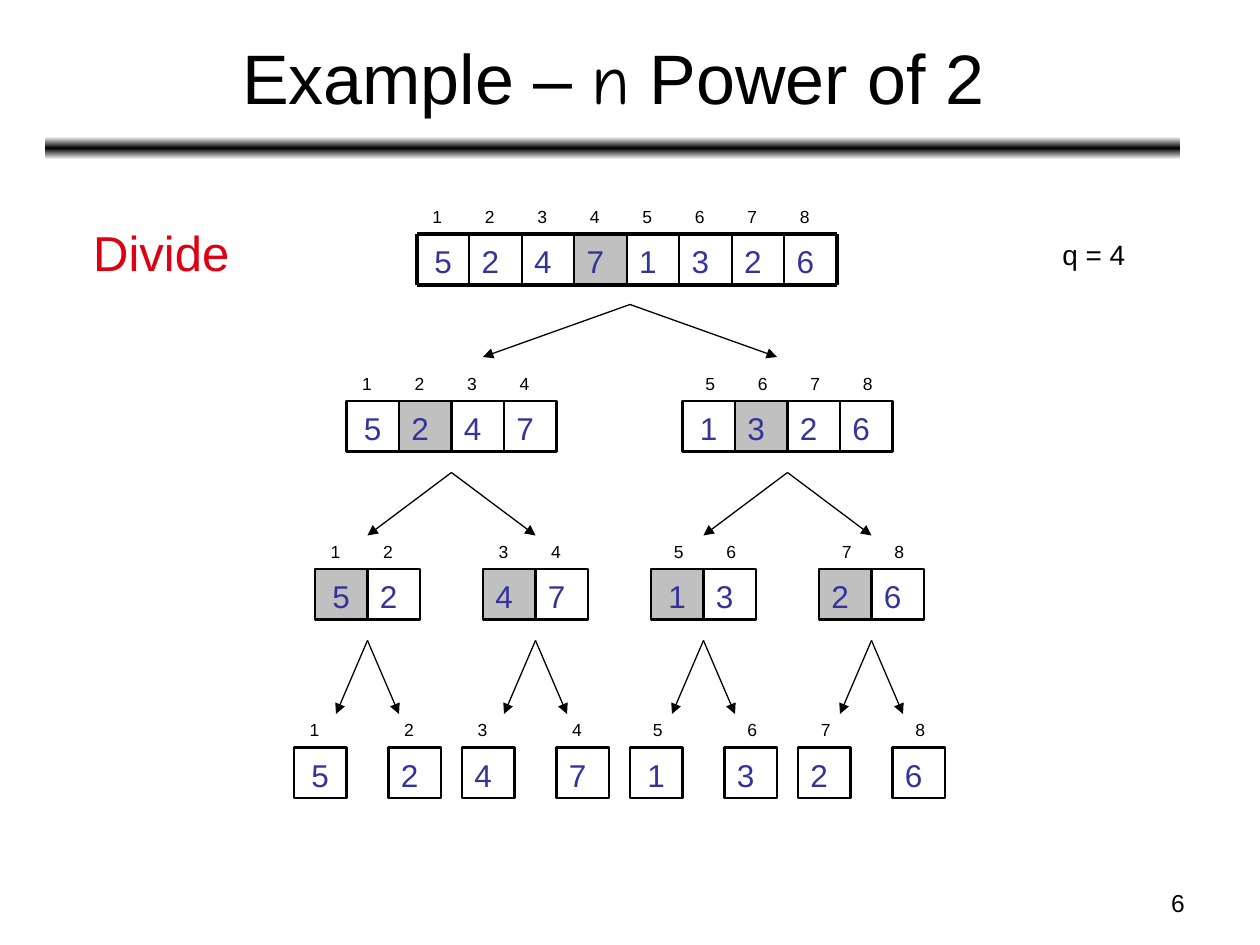
from copy import deepcopy

from lxml import etree
from pptx import Presentation, util as u
from pptx.dml.color import RGBColor
from pptx.enum import shapes, text
from pptx.oxml import ns

BLACK = RGBColor(0, 0, 0)
WHITE = RGBColor(0xFF, 0xFF, 0xFF)
GREY = RGBColor(0xC0, 0xC0, 0xC0)
BLUE = RGBColor(0x33, 0x33, 0x99)
RED = RGBColor(0xDD, 0x01, 0x11)

deck = Presentation()
deck.slide_width, deck.slide_height = u.Inches(10), u.Inches(7.5)
page = deck.slides.add_slide(deck.slide_layouts[6])

# Grid of 120 columns by 90 rows
COLUMN, ROW = deck.slide_width / 120, deck.slide_height / 90
CELL_WIDTH, CELL_HEIGHT = 5, 4.8


def area(left, top, width, height):
    return int(left * COLUMN), int(top * ROW), int(width * COLUMN), int(height * ROW)


def write(runs, left, top, width, height, size=10, color=BLACK, align="LEFT",
          anchor="TOP", wrap=True, fill=None, line=None, top_inset=0.05):
    """Put text on the grid; runs is a string or a list of (words, font)."""
    box = page.shapes.add_textbox(*area(left, top, width, height))
    if fill is not None:
        box.fill.solid()
        box.fill.fore_color.rgb = fill
    if line is not None:
        box.line.color.rgb = BLACK
        box.line.width = u.Pt(line)
    frame = box.text_frame
    frame.word_wrap = wrap
    frame.margin_top = u.Inches(top_inset)
    frame.vertical_anchor = getattr(text.MSO_ANCHOR, anchor)
    para = frame.paragraphs[0]
    para.alignment = getattr(text.PP_ALIGN, align)
    for words, font in [(runs, "Arial")] if isinstance(runs, str) else runs:
        span = para.add_run()
        span.text = words
        span.font.name, span.font.size = font, u.Pt(size)
        span.font.color.rgb = color


def draw_line(x1, y1, x2, y2, weight, arrow=False):
    line = page.shapes.add_connector(
        shapes.MSO_CONNECTOR.STRAIGHT,
        int(x1 * COLUMN), int(y1 * ROW), int(x2 * COLUMN), int(y2 * ROW))
    line.line.color.rgb = BLACK
    line.line.width = u.Pt(weight)
    if arrow:
        etree.SubElement(line.line._get_or_add_ln(), ns.qn("a:tailEnd"), type="triangle")
    etree.SubElement(line._element.spPr, ns.qn("a:effectLst"))


# Rule under the title, fading from black to white on both sides
rule = page.shapes.add_shape(shapes.MSO_SHAPE.ROUNDED_RECTANGLE, *area(4.3, 13, 108.1, 2.2))
rule.shadow.inherit = False
rule.line.fill.background()
rule.fill.gradient()
rule.fill.gradient_angle = 90
stop_list = rule.fill._fill._gradFill.gsLst
stop_list.append(deepcopy(stop_list[0]))
for stop, position, color in zip(rule.fill.gradient_stops, (0, 0.5, 1), (WHITE, BLACK, WHITE)):
    stop.position = position
    stop.color.rgb = color

# Title, side notes and page number
write([("Example – ", "Arial"), ("n", "Comic Neue"), (" Power of 2", "Arial")],
      4.4, 1.3, 108, 11.9, size=40, align="CENTER", anchor="MIDDLE")
write("Divide", 7.7, 20.6, 15.4, 6.8, size=28, color=RED, wrap=False)
write("q = 4", 100, 22, 13, 4.4, size=16)
write("6", 86, 84, 28, 4.2, size=14, align="RIGHT")

# Arrays at each level of the division: top row, left columns, cell outline
VALUES = "52471326"
LEVELS = [
    (22.3, [39.7], None),
    (38.2, [33, 65], 1.5),
    (54.2, [30, 46, 62, 78], 1.5),
    (71.2, [28, 37, 44, 53, 60, 69, 76, 85], 1.5),
]
for top, lefts, outline in LEVELS:
    size = len(VALUES) // len(lefts)
    for part, left in enumerate(lefts):
        for place in range(size):
            index = part * size + place
            x = left + place * CELL_WIDTH
            right_half = part >= len(lefts) / 2
            centred = index == 0 or (index == 4 and size < 8)
            middle = size > 1 and place == (size - 1) // 2
            write(str(index + 1), x + (1 if right_half else 0.3), top - 3.3, 3, 3.2)
            write(VALUES[index], x, top, CELL_WIDTH, CELL_HEIGHT, size=18, color=BLUE,
                  align="CENTER" if centred else "LEFT", anchor="MIDDLE",
                  fill=GREY if middle else None, line=outline, top_inset=0.08)

# Frame and dividers of the full array
top, (left,), _ = LEVELS[0]
right, bottom = left + len(VALUES) * CELL_WIDTH, top + CELL_HEIGHT
for y in (top, bottom):
    draw_line(left, y, right, y, 2.25)
for edge in range(len(VALUES) + 1):
    x = left + edge * CELL_WIDTH
    draw_line(x, top, x, bottom, 2.25 if edge in (0, len(VALUES)) else 1)

# Arrows from each array to its two halves: start row, end row, spread, apexes
for start, end, spread, apexes in [
    (29, 34, 14, [60]),
    (45, 51, 8, [43, 75]),
    (61, 68, 3, [35, 51, 67, 83]),
]:
    for apex in apexes:
        for side in (-spread, spread):
            draw_line(apex, start, apex + side, end, 0.75, arrow=True)

deck.save("out.pptx")
